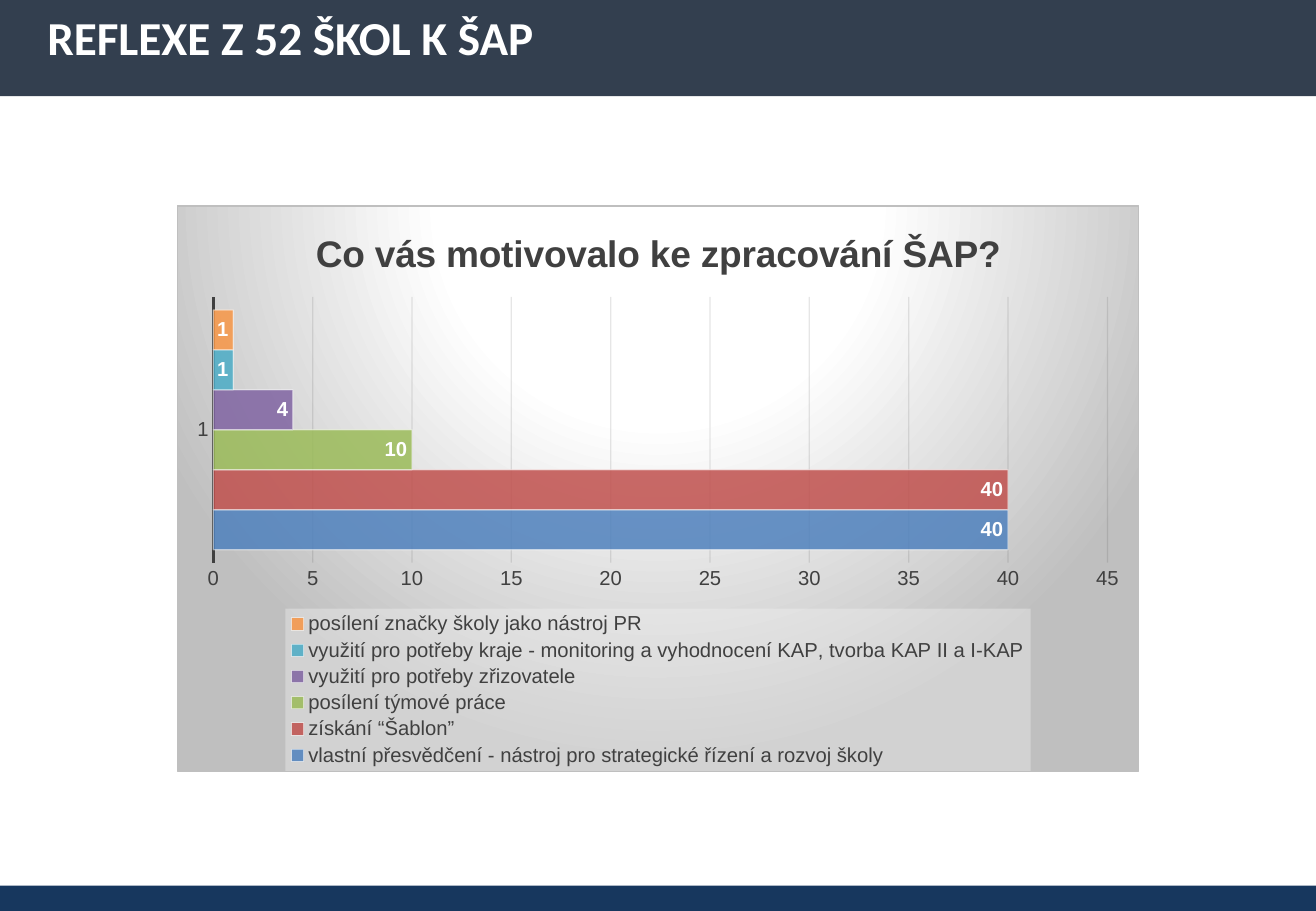
import pptx
import pptx.chart.data
import pptx.dml.color
import pptx.enum.chart
import pptx.enum.shapes
import pptx.enum.text
import pptx.oxml
import pptx.oxml.ns
import pptx.util

Pt = pptx.util.Pt
RGB = pptx.dml.color.RGBColor.from_string
qn = pptx.oxml.ns.qn
COLORS = {
    "header": "333F4F", "footer": "17375E", "white": "FFFFFF", "text": "404040",
    "grid": "0D0D0D", "grey": "BFBFBF", "legend": "F2F2F2",
}
ANSWERS = [
    ("vlastní přesvědčení - nástroj pro strategické řízení a rozvoj školy", 40, "4F81BD"),
    ("získání “Šablon”", 40, "C0504D"),
    ("posílení týmové práce", 10, "9BBB59"),
    ("využití pro potřeby zřizovatele", 4, "8064A2"),
    ("využití pro potřeby kraje - monitoring a vyhodnocení KAP, tvorba KAP II a I-KAP", 1, "4BACC6"),
    ("posílení značky školy jako nástroj PR", 1, "F79646"),
]
NAMESPACES = (
    'xmlns:c="http://schemas.openxmlformats.org/drawingml/2006/chart" '
    'xmlns:a="http://schemas.openxmlformats.org/drawingml/2006/main"'
)


def write(frame, text, *, font, size, color):
    run = frame.paragraphs[0].add_run()
    run.text = text
    run.font.name = font
    run.font.size = Pt(size)
    run.font.bold = True
    run.font.color.rgb = RGB(color)


def layout_xml(x, y, w, h, target=""):
    values = "".join(f'<c:{key} val="{value}"/>' for key, value in
                     (("xMode", "edge"), ("yMode", "edge"), ("x", x), ("y", y), ("w", w), ("h", h)))
    return pptx.oxml.parse_xml(
        f"<c:layout {NAMESPACES}><c:manualLayout>{target}{values}</c:manualLayout></c:layout>")


deck = pptx.Presentation()
deck.slide_width, deck.slide_height = Pt(780), Pt(540)
slide = deck.slides.add_slide(deck.slide_layouts[6])

bands = []
for top, height, color in ((525, 15, "footer"), (0, 57, "header")):
    band = slide.shapes.add_shape(
        pptx.enum.shapes.MSO_SHAPE.RECTANGLE, 0, Pt(top), Pt(780), Pt(height))
    band.shadow.inherit = False
    band.fill.solid()
    band.fill.fore_color.rgb = RGB(COLORS[color])
    band.line.fill.background()
    bands.append(band)

heading = bands[-1].text_frame
heading.word_wrap = True
heading.vertical_anchor = pptx.enum.text.MSO_ANCHOR.TOP
heading.margin_left = heading.margin_right = Pt(28)
heading.margin_top, heading.margin_bottom = Pt(5), Pt(3)
heading.paragraphs[0].alignment = pptx.enum.text.PP_ALIGN.LEFT
write(heading, "REFLEXE Z 52 ŠKOL K ŠAP", font="Calibri", size=28, color=COLORS["white"])

motivation = pptx.chart.data.CategoryChartData()
motivation.categories = ["1"]
for name, schools, color in ANSWERS:
    motivation.add_series(name, [schools])
chart = slide.shapes.add_chart(
    pptx.enum.chart.XL_CHART_TYPE.BAR_CLUSTERED,
    Pt(105), Pt(121.7), Pt(570), Pt(336), motivation).chart
chart.font.name = "Arial"
chart.font.size = Pt(10)
chart.has_title = True
write(chart.chart_title.text_frame, "Co vás motivovalo ke zpracování ŠAP?",
      font="Arial", size=22, color=COLORS["text"])
chart.chart_title.include_in_layout = False
chart.has_legend = True
chart.legend.position = pptx.enum.chart.XL_LEGEND_POSITION.BOTTOM
chart.legend.include_in_layout = False

answers_axis, schools_axis = chart.category_axis, chart.value_axis
schools_axis.minimum_scale, schools_axis.maximum_scale = 0, 45
schools_axis.major_unit = 5
for axis in (answers_axis, schools_axis):
    axis.major_tick_mark = pptx.enum.chart.XL_TICK_MARK.NONE
    axis.minor_tick_mark = pptx.enum.chart.XL_TICK_MARK.NONE
for font in (answers_axis.tick_labels.font, schools_axis.tick_labels.font, chart.legend.font):
    font.name = "Arial"
    font.size = Pt(12)
    font.color.rgb = RGB(COLORS["text"])
answers_axis.format.line.color.rgb = RGB(COLORS["text"])
answers_axis.format.line.width = Pt(1.5)
schools_axis.format.line.fill.background()
grid = schools_axis.major_gridlines.format.line
grid.color.rgb = RGB(COLORS["grid"])
grid.width = Pt(0.75)
translucent = [(schools_axis.major_gridlines._xAx.find(qn("c:majorGridlines")), (10,))]

plot = chart.plots[0]
plot.gap_width = 65
plot.overlap = 0
plot.vary_by_categories = False
for series, (name, schools, color) in zip(plot.series, ANSWERS):
    series.format.fill.solid()
    series.format.fill.fore_color.rgb = RGB(color)
    series.format.line.color.rgb = RGB(COLORS["white"])
    series.format.line.width = Pt(0.75)
    translucent.append((series._element.find(qn("c:spPr")), (85, 50)))
    labels = series.data_labels
    labels.show_value = True
    labels.position = pptx.enum.chart.XL_LABEL_POSITION.INSIDE_END
    labels.font.name = "Arial"
    labels.font.size = Pt(12)
    labels.font.bold = True
    labels.font.color.rgb = RGB(COLORS["white"])

for part, opacities in translucent:
    for tone, opacity in zip(part.iter(qn("a:srgbClr")), opacities):
        tone.append(pptx.oxml.parse_xml(f'<a:alpha {NAMESPACES} val="{opacity * 1000}"/>'))

plot_area = chart._chartSpace.chart.plotArea
for automatic in plot_area.findall(qn("c:layout")):
    plot_area.remove(automatic)
plot_area.insert(0, layout_xml(0.037, 0.161, 0.931, 0.47, '<c:layoutTarget val="inner"/>'))

legend = chart.legend._element
for automatic in legend.findall(qn("c:layout")):
    legend.remove(automatic)
legend.find(qn("c:legendPos")).addnext(layout_xml(0.112, 0.712, 0.776, 0.287))
legend.find(qn("c:overlay")).addnext(pptx.oxml.parse_xml(
    f'<c:spPr {NAMESPACES}><a:solidFill><a:srgbClr val="{COLORS["legend"]}">'
    '<a:alpha val="39000"/></a:srgbClr></a:solidFill><a:ln><a:noFill/></a:ln></c:spPr>'))

stops = "".join(
    f'<a:gs pos="{position * 1000}"><a:srgbClr val="{COLORS[color]}"/></a:gs>'
    for position, color in ((0, "white"), (39, "white"), (100, "grey")))
chart._chartSpace.chart.addnext(pptx.oxml.parse_xml(
    f'<c:spPr {NAMESPACES}><a:gradFill><a:gsLst>{stops}</a:gsLst><a:path path="circle">'
    '<a:fillToRect l="50000" t="-80000" r="50000" b="180000"/></a:path></a:gradFill>'
    f'<a:ln w="9525"><a:solidFill><a:srgbClr val="{COLORS["grey"]}"/></a:solidFill></a:ln></c:spPr>'))

deck.save("out.pptx")
